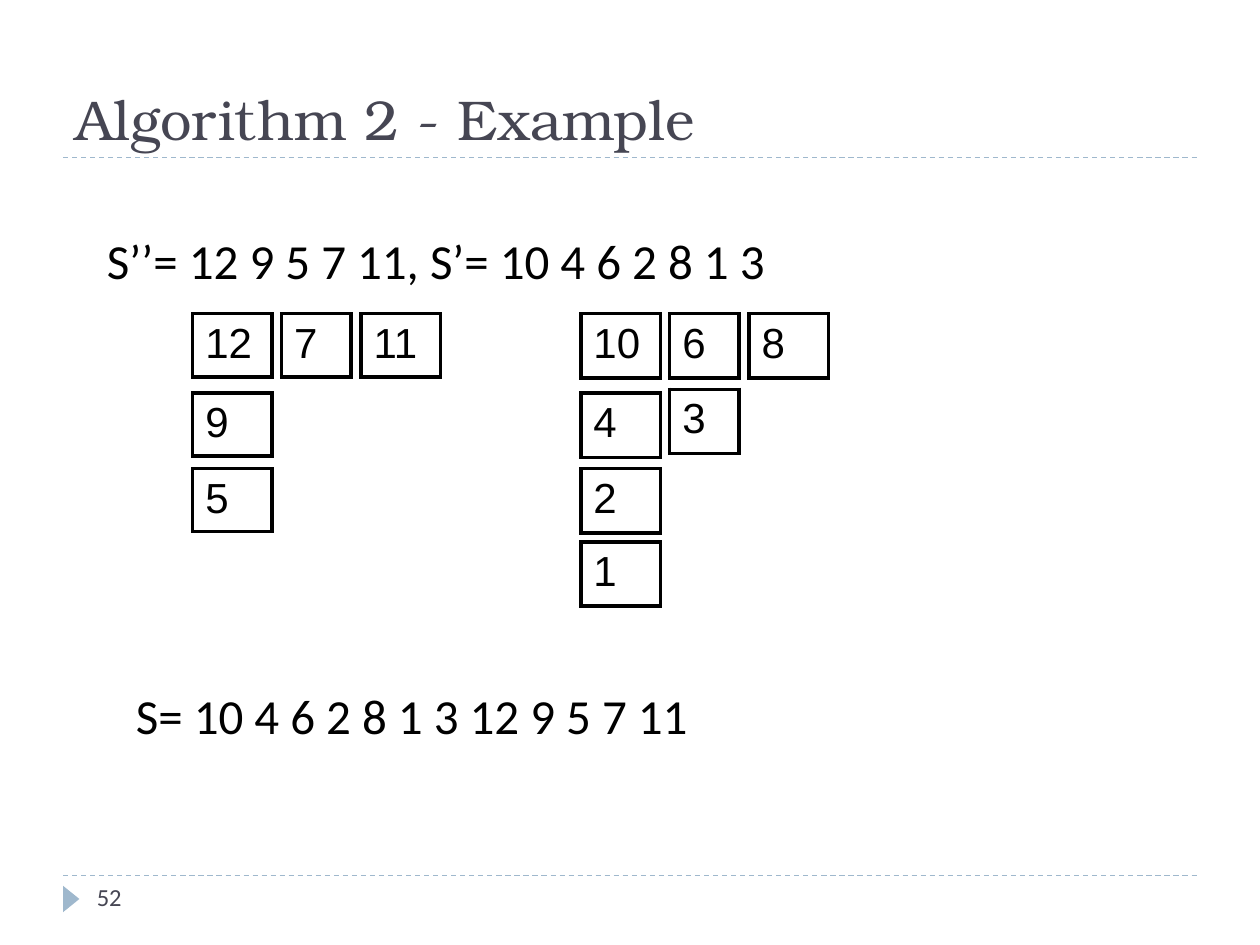
"""Build the Algorithm 2 example slide with its two stacks of number cells."""
from lxml import etree
from pptx import Presentation
from pptx import util as u
from pptx.dml.color import RGBColor
from pptx.enum import dml, shapes, text
from pptx.oxml.ns import qn

THEME = {
    "ink": RGBColor.from_string("000000"),
    "heading": RGBColor.from_string("464653"),
    "accent": RGBColor.from_string("9FB8CD"),
    "title": ("TeX Gyre Bonum", 32),
    "body": ("Calibri", 28),
    "cell": ("Arial", 24),
    "number": ("Calibri", 14),
    "rule": 0.75,
    "border": 2.25,
}

presentation = Presentation()
presentation.slide_width, presentation.slide_height = u.Inches(10), u.Inches(7.5)
slide = presentation.slides.add_slide(presentation.slide_layouts[6])
UNIT = presentation.slide_width / 100  # the slide is 100 columns by 75 rows


def grid(*lengths):
    """Turn columns and rows into slide lengths."""
    return [u.Emu(round(length * UNIT)) for length in lengths]


def write(frame, wording, style, color):
    """Put one styled run into a text frame."""
    run = frame.paragraphs[0].add_run()
    run.text = wording
    name, size = THEME[style]
    for key, value in {"name": name, "size": u.Pt(size)}.items():
        setattr(run.font, key, value)
    run.font.color.rgb = THEME[color]


for row in (69.5, 12.5):
    rule = slide.shapes.add_connector(shapes.MSO_CONNECTOR.STRAIGHT, *grid(5, row, 95, row))
    rule.line.color.rgb = THEME["accent"]
    for key, value in {"width": u.Pt(THEME["rule"]), "dash_style": dml.MSO_LINE.DASH}.items():
        setattr(rule.line, key, value)
    etree.SubElement(rule._element.spPr, qn("a:effectLst"))

marker = slide.shapes.add_shape(shapes.MSO_SHAPE.ISOSCELES_TRIANGLE, *grid(4.6, 70.7, 2.1, 1.3))
marker.rotation = 90
marker.shadow.inherit = False
marker.fill.solid()
marker.fill.fore_color.rgb = THEME["accent"]
marker.line.fill.background()

TOP, BOTTOM = text.MSO_ANCHOR.TOP, text.MSO_ANCHOR.BOTTOM
WORDING = [
    ("52", "number", "heading", TOP, (6.7, 69.5, 21.7, 4)),
    ("Algorithm 2 - Example", "title", "heading", BOTTOM, (5, 1.7, 90, 10.8)),
    ("S’’= 12 9 5 7 11, S’= 10 4 6 2 8 1 3", "body", "ink", TOP, (7.5, 17.8, 67.7, 5.7)),
    ("S= 10 4 6 2 8 1 3 12 9 5 7 11", "body", "ink", TOP, (9.8, 53.9, 67.7, 5.7)),
]
for wording, style, color, anchor, area in WORDING:
    frame = slide.shapes.add_textbox(*grid(*area)).text_frame
    for key, value in {"word_wrap": True, "vertical_anchor": anchor}.items():
        setattr(frame, key, value)
    write(frame, wording, style, color)

COLUMNS = [(0, 6.3), (7.05, 5.5), (13.35, 6.3)]
ROWS = [24.9, 31.2, 37.2, 43]
STACKS = [
    (15.3, 4.8, [["12", "9", "5"], ["7"], ["11"]]),
    (46.1, 5.1, [["10", "4", "2", "1"], ["6", "3"], ["8"]]),
]
for left, height, piles in STACKS:
    for (offset, width), pile in zip(COLUMNS, piles):
        for row, number in zip(ROWS, pile):
            top = row - 0.3 if offset and row > ROWS[0] else row
            area = grid(left + offset, top, width, height)
            table = slide.shapes.add_table(1, 1, *area).table
            for key in ("first_row", "horz_banding"):
                setattr(table, key, False)
            cell = table.cell(0, 0)
            write(cell.text_frame, number, "cell", "ink")
            properties = cell._tc.get_or_add_tcPr()
            for side in ("L", "R", "T", "B"):
                border = etree.SubElement(properties, qn(f"a:ln{side}"), w=str(u.Pt(THEME["border"])))
                fill = etree.SubElement(border, qn("a:solidFill"))
                etree.SubElement(fill, qn("a:srgbClr"), val=str(THEME["ink"]))
            cell.fill.background()

presentation.save("out.pptx")
